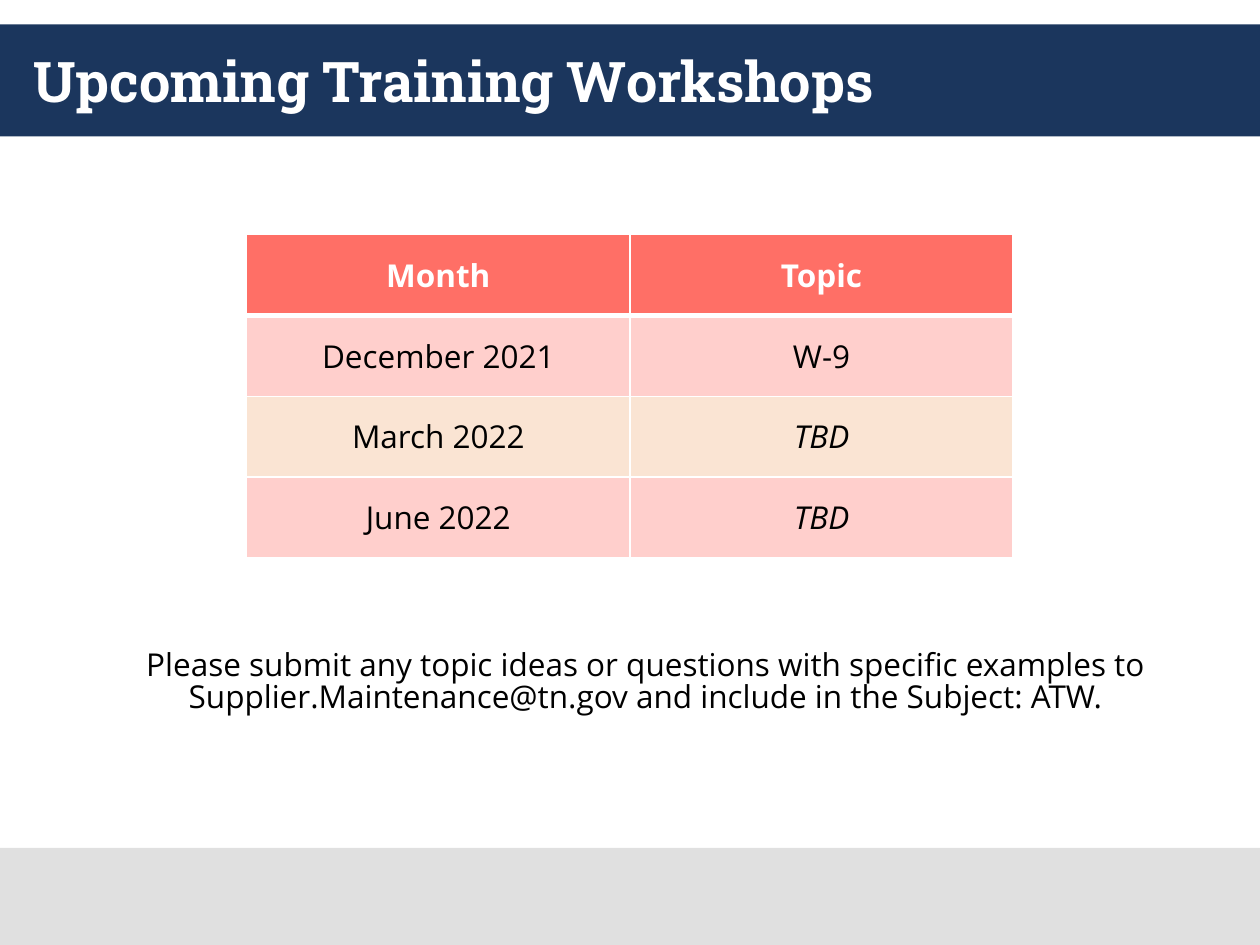
from dataclasses import dataclass

from lxml import etree
from pptx import Presentation
from pptx.dml.color import RGBColor
from pptx.enum.shapes import MSO_SHAPE
from pptx.enum.text import MSO_ANCHOR, PP_ALIGN
from pptx.oxml.ns import qn
from pptx.util import Pt

RECTANGLE = MSO_SHAPE.RECTANGLE
MIDDLE = MSO_ANCHOR.MIDDLE
CENTER = PP_ALIGN.CENTER
LEFT = PP_ALIGN.LEFT


@dataclass(frozen=True)
class Theme:
    """Colours, fonts and type sizes of the slide."""
    navy: str = "1B365D"
    grey: str = "E0E0E0"
    coral: str = "FF6F66"
    pink: str = "FFCFCC"
    peach: str = "FAE4D3"
    white: str = "FFFFFF"
    black: str = "000000"
    title_font: str = "Roboto Slab"
    body_font: str = "Open Sans"
    title_size: int = 32
    body_size: int = 18


THEME = Theme()
WIDTH, HEIGHT = 720, 540
SCHEDULE = [
    ("Month", "Topic"),
    ("December 2021", "W-9"),
    ("March 2022", "TBD"),
    ("June 2022", "TBD"),
]
REQUEST = ("Please submit any topic ideas or questions with specific examples to "
           "Supplier.Maintenance@tn.gov and include in the Subject: ATW.")


def write(frame, text, font_name, size, color, bold=False, italic=False, align=CENTER):
    """Fill a text frame with one formatted paragraph."""
    frame.text = text
    paragraph = frame.paragraphs[0]
    paragraph.alignment = align
    font = paragraph.runs[0].font
    font.name, font.size = font_name, Pt(size)
    font.bold, font.italic = bold, italic
    font.color.rgb = RGBColor.from_string(color)
    return paragraph


def add_band(slide, left, top, width, height, color):
    """Draw a plain coloured band."""
    band = slide.shapes.add_shape(RECTANGLE, Pt(left), Pt(top), Pt(width), Pt(height))
    band.shadow.inherit = False
    band.fill.solid()
    band.fill.fore_color.rgb = RGBColor.from_string(color)
    band.line.fill.background()


def add_header(slide, left, top, width, height):
    """Draw the title band with the slide title on it."""
    margin = 12
    add_band(slide, left, top, width, height, THEME.navy)
    title = slide.shapes.add_textbox(Pt(left + margin), Pt(top), Pt(width - 2 * margin), Pt(height))
    frame = title.text_frame
    frame.word_wrap = True
    frame.vertical_anchor = MIDDLE
    write(frame, "Upcoming Training Workshops", THEME.title_font, THEME.title_size,
          THEME.white, bold=True, align=LEFT)


def set_borders(cell, bottom_width, top_width):
    """Give a cell white borders, which come before its fill."""
    properties = cell._tc.get_or_add_tcPr()
    widths = {"a:lnL": 1, "a:lnR": 1, "a:lnT": top_width, "a:lnB": bottom_width}
    for position, (tag, width) in enumerate(widths.items()):
        border = etree.Element(qn(tag), w=str(Pt(width)))
        fill = etree.SubElement(border, qn("a:solidFill"))
        etree.SubElement(fill, qn("a:srgbClr"), val=THEME.white)
        properties.insert(position, border)


def add_schedule(slide, left, top, width, height):
    """Draw the table of workshop months and topics."""
    row_count, column_count = len(SCHEDULE), len(SCHEDULE[0])
    schedule = slide.shapes.add_table(row_count, column_count, Pt(left), Pt(top),
                                      Pt(width), Pt(height)).table
    for row_index, entries in enumerate(SCHEDULE):
        is_header = row_index == 0
        body_fill = THEME.pink if row_index % 2 else THEME.peach
        for column_index, entry in enumerate(entries):
            cell = schedule.cell(row_index, column_index)
            cell.vertical_anchor = MIDDLE
            cell.fill.solid()
            cell.fill.fore_color.rgb = RGBColor.from_string(THEME.coral if is_header else body_fill)
            set_borders(cell, 3 if is_header else 1, 3 if row_index == 1 else 1)
            write(cell.text_frame, entry, THEME.body_font, THEME.body_size,
                  THEME.white if is_header else THEME.black,
                  bold=is_header, italic=entry == "TBD")


def add_request(slide, left, top, width, height):
    """Write the request for topic ideas below the table."""
    request = slide.shapes.add_textbox(Pt(left), Pt(top), Pt(width), Pt(height))
    request.text_frame.word_wrap = True
    paragraph = write(request.text_frame, REQUEST, THEME.body_font, THEME.body_size, THEME.black)
    paragraph.line_spacing = 0.86


def main():
    """Build and save the slide."""
    presentation = Presentation()
    presentation.slide_width, presentation.slide_height = Pt(WIDTH), Pt(HEIGHT)
    slide = presentation.slides.add_slide(presentation.slide_layouts[6])
    add_header(slide, 0, 14, WIDTH, 64)
    add_band(slide, 0, 484.5, WIDTH, 55.5, THEME.grey)
    add_request(slide, 60, 368, 618, 51)
    add_schedule(slide, 141, 134, 438, 185)
    presentation.save("out.pptx")


if __name__ == "__main__":
    main()
